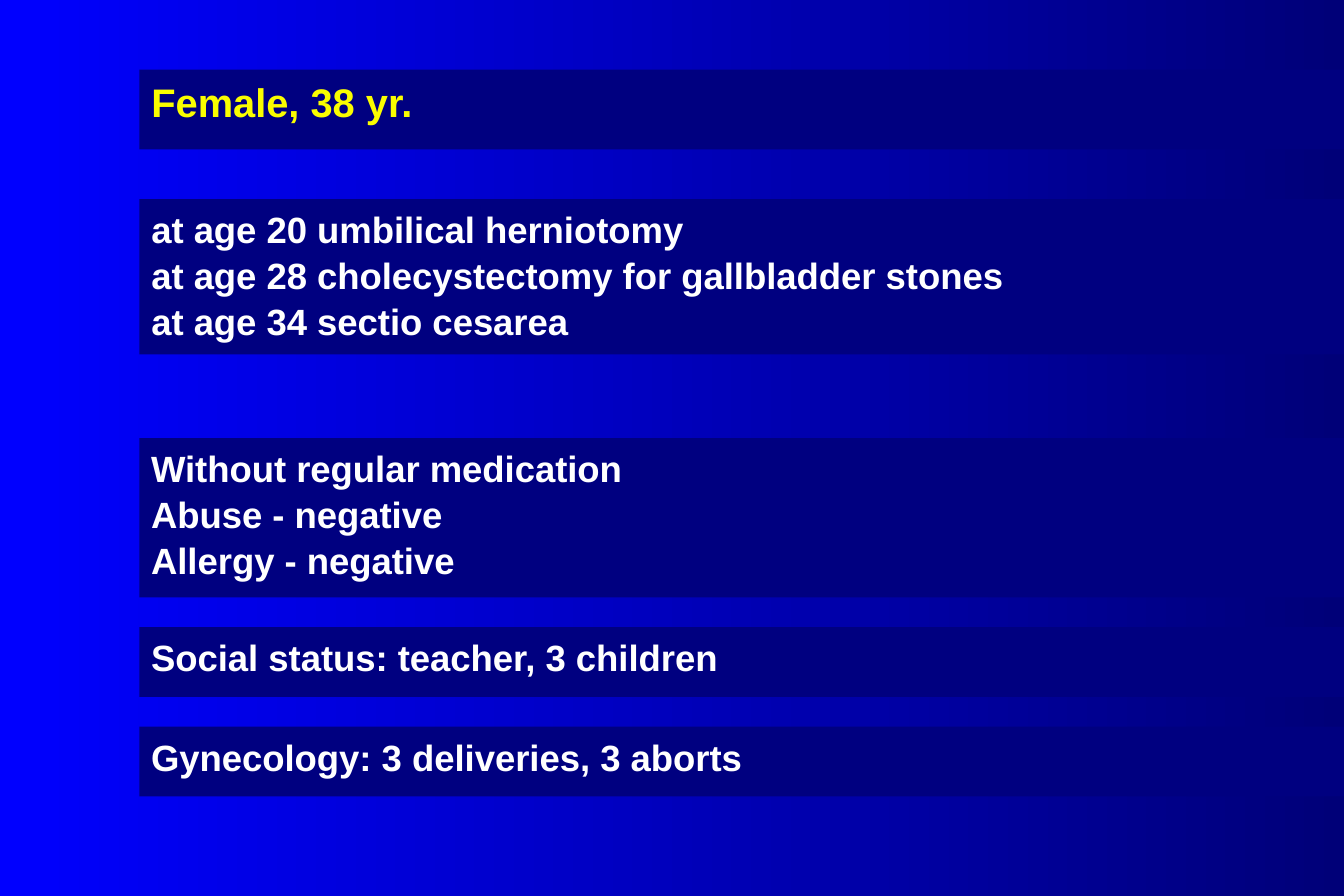
from dataclasses import dataclass

from lxml.etree import SubElement
from pptx import Presentation
from pptx.dml.color import RGBColor
from pptx.enum.shapes import MSO_SHAPE as Preset
from pptx.enum.text import MSO_ANCHOR as Anchor, MSO_AUTO_SIZE as Fit, PP_ALIGN as Align
from pptx.oxml.ns import qn
from pptx.shapes.autoshape import Shape
from pptx.slide import Slide
from pptx.util import Emu, Pt

SCALE = 7620  # EMU per px, 120 px to the inch
WIDE, HIGH = 1350, 900
LEFT = 140
INDENT = 45
COLORS = {"start": "0000FF", "end": "000078", "band": "000080",
          "title": "FAFD00", "text": "FFFFFF"}


@dataclass(frozen=True)
class Band:
    top: int
    height: int
    lines: tuple[str, ...]
    size: int = 22
    color: str = "text"


TITLE = Band(70, 80, ("Female, 38 yr.",), 24, "title")
HISTORY = Band(200, 156, (
    "at age 20 umbilical herniotomy",
    "at age 28 cholecystectomy for gallbladder stones",
    "at age 34 sectio cesarea",
))
OTHERS = (
    Band(440, 160, ("Without regular medication", "Abuse - negative", "Allergy - negative")),
    Band(630, 70, ("Social status: teacher, 3 children",)),
    Band(730, 70, ("Gynecology: 3 deliveries, 3 aborts",)),
)


def px(count: int) -> Emu:
    return Emu(count * SCALE)


def rgb(name: str) -> RGBColor:
    return RGBColor.from_string(COLORS[name])


def paint(slide: Slide) -> None:
    """Fill the background with the blue gradient."""
    fill = slide.background.fill
    fill.gradient()
    fill.gradient_angle = 0
    for stop, name in zip(fill.gradient_stops, ("start", "end")):
        stop.color.rgb = rgb(name)


def place(shape: Shape, band: Band) -> None:
    """Move a shape or placeholder to its band, then style and fill it."""
    shape.left, shape.top = px(LEFT), px(band.top)
    shape.width, shape.height = px(WIDE - LEFT), px(band.height)
    shape.fill.solid()
    shape.fill.fore_color.rgb = rgb("band")
    shape.line.fill.background()

    frame = shape.text_frame
    frame.word_wrap = True
    frame.auto_size = Fit.NONE
    frame.vertical_anchor = Anchor.TOP
    frame.margin_left = frame.margin_right = px(12)
    frame.margin_top = frame.margin_bottom = px(6)
    frame.text = "\n".join(band.lines)
    for para in frame.paragraphs:
        para.alignment = Align.LEFT
        para.line_spacing = 1.05
        para.space_before = para.space_after = Pt(0)
        font = para.font
        font.name, font.size, font.bold = "Arial", Pt(band.size), True
        font.color.rgb = rgb(band.color)
        props = para._p.get_or_add_pPr()
        props.set("marL", str(px(INDENT)))
        props.set("indent", str(px(-INDENT)))
        mark = SubElement(props, qn("a:buNone"))
        props.remove(mark)
        props.find(qn("a:defRPr")).addprevious(mark)


def main() -> None:
    deck = Presentation()
    deck.slide_width, deck.slide_height = px(WIDE), px(HIGH)
    slide = deck.slides.add_slide(deck.slide_layouts[1])
    paint(slide)
    place(slide.shapes.title, TITLE)
    place(slide.placeholders[1], HISTORY)
    for band in OTHERS:
        shape = slide.shapes.add_shape(Preset.RECTANGLE, 0, 0, 0, 0)
        shape.shadow.inherit = False
        place(shape, band)
    deck.save("out.pptx")


if __name__ == "__main__":
    main()
